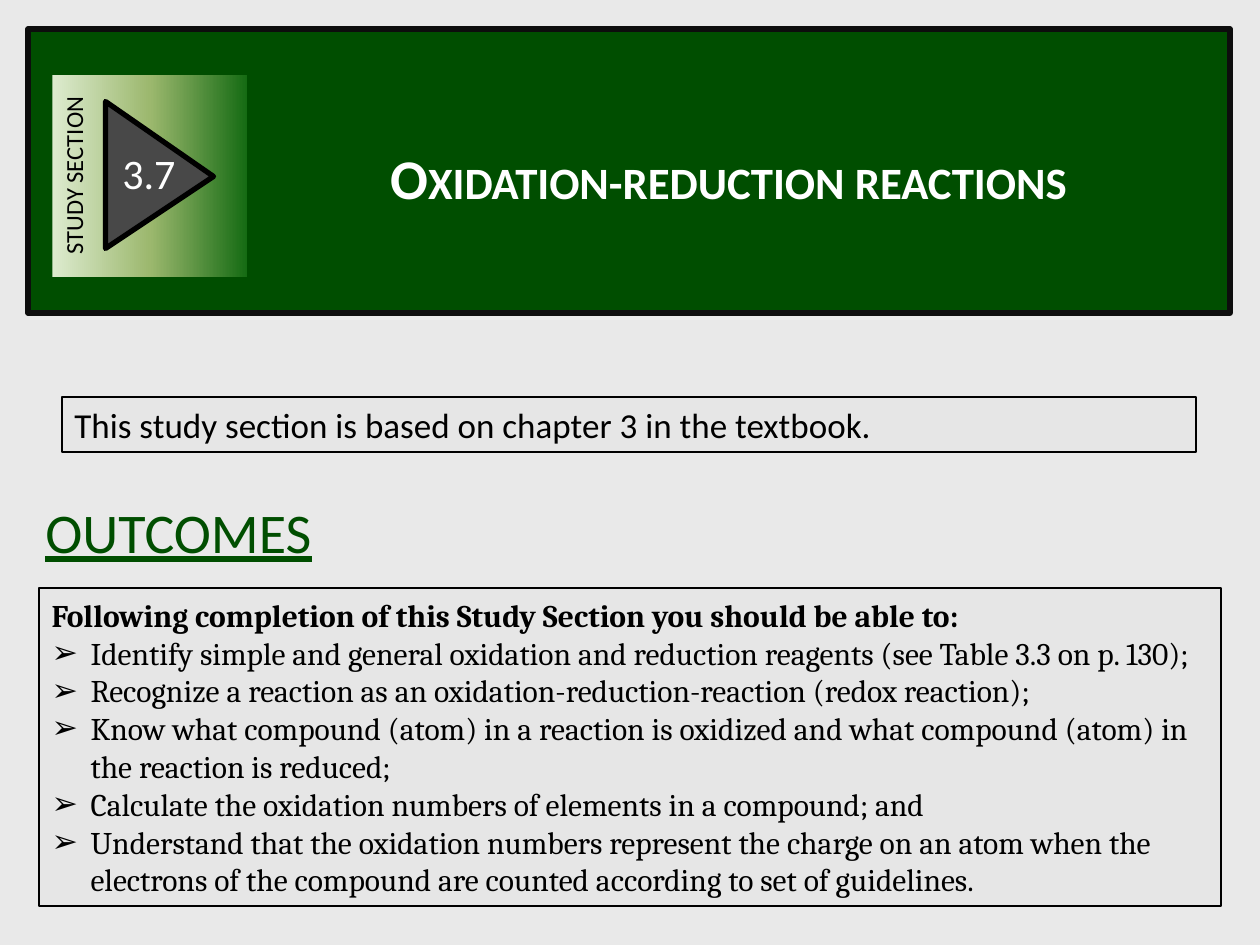
"""Build the opening slide of study section 3.7 on oxidation-reduction reactions."""
from lxml.etree import SubElement
from pptx import Presentation
from pptx.dml.color import RGBColor
from pptx.enum.shapes import MSO_SHAPE as Shape
from pptx.enum.text import MSO_ANCHOR as Anchor, MSO_AUTO_SIZE as Fit, PP_ALIGN as Align
from pptx.oxml.ns import qn
from pptx.util import Emu, Pt

PX = 914400 / 126
GREEN, GREY, BLACK, WHITE = "004E00", "E6E6E6", "000000", "FFFFFF"
OUTCOMES = [
    "Identify simple and general oxidation and reduction reagents (see Table 3.3 on p. 130);",
    "Recognize a reaction as an oxidation-reduction-reaction (redox reaction);",
    "Know what compound (atom) in a reaction is oxidized and what compound (atom) in the reaction is reduced;",
    "Calculate the oxidation numbers of elements in a compound; and",
    "Understand that the oxidation numbers represent the charge on an atom when the electrons of the "
    "compound are counted according to set of guidelines.",
]


def style(shape, at, fill=None, line=None, width=1.5):
    """Place a shape given in px and paint its fill and line."""
    shape.left, shape.top, shape.width, shape.height = (Emu(round(n * PX)) for n in at)
    if fill:
        shape.fill.solid()
        shape.fill.fore_color.rgb = RGBColor.from_string(fill)
    if line:
        shape.line.color.rgb = RGBColor.from_string(line)
        shape.line.width = Pt(width)


def write(para, words, size, color, align=Align.LEFT, face="Calibri", bold=False):
    """Fill a paragraph with evenly formatted text."""
    para.text = words
    para.alignment = align
    para.space_before = Pt(0)
    para.font.name, para.font.size, para.font.bold = face, Pt(size), bold
    para.font.color.rgb = RGBColor.from_string(color)


deck = Presentation()
deck.slide_width, deck.slide_height = Emu(round(1260 * PX)), Emu(round(945 * PX))
page = deck.slides.add_slide(deck.slide_layouts[1])
page.background.fill.solid()
page.background.fill.fore_color.rgb = RGBColor.from_string("E9E9E9")
shapes = page.shapes
title, body = page.placeholders

banner = shapes.add_shape(Shape.RECTANGLE, 0, 0, 0, 0)
banner.shadow.inherit = False
style(banner, (28, 29, 1202, 284), GREEN, "0D0D0D", 3)
title.element.addprevious(banner.element)

style(title, (266, 137, 925, 81))
title.text_frame.vertical_anchor = Anchor.TOP
title.text_frame.auto_size = Fit.NONE
write(title.text_frame.paragraphs[0], "Oxidation-reduction reactions", 32, WHITE, Align.CENTER, bold=True)
next(title.element.iter(qn("a:defRPr"))).set("cap", "small")

badge = shapes.add_group_shape()
panel = badge.shapes.add_shape(Shape.RECTANGLE, 0, 0, 0, 0)
panel.shadow.inherit = False
style(panel, (49, 78, 202, 195))
panel.rotation = 270
panel.line.fill.background()
panel.fill.gradient()
panel.fill.gradient_angle = 270
stops = next(panel.element.iter(qn("a:gsLst")))
for stop in list(stops):
    stops.remove(stop)
for place, color in ((0, "DDEBCF"), (50, "9CB86E"), (100, "156B13")):
    stop = SubElement(stops, qn("a:gs"), pos=str(place * 1000))
    SubElement(stop, qn("a:srgbClr"), val=color)
panel.text_frame.vertical_anchor = Anchor.TOP
write(panel.text_frame.paragraphs[0], "STUDY SECTION", 14, BLACK, Align.CENTER)

arrow = badge.shapes.add_shape(Shape.ISOSCELES_TRIANGLE, 0, 0, 0, 0)
arrow.shadow.inherit = False
style(arrow, (86, 121, 147, 108), "484848", BLACK, 3)
arrow.rotation = 90
arrow.adjustments[0] = 0.51

number = badge.shapes.add_textbox(0, 0, 0, 0)
style(number, (110, 141, 79, 63))
write(number.text_frame.paragraphs[0], "3.7", 24, WHITE)

heading = shapes.add_textbox(0, 0, 0, 0)
style(heading, (33, 491, 336, 81))
heading.text_frame.word_wrap = True
write(heading.text_frame.paragraphs[0], "OUTCOMES", 32, GREEN)
heading.text_frame.paragraphs[0].font.underline = True

style(body, (39, 588, 1182, 318), GREY, BLACK)
frame = body.text_frame
frame.vertical_anchor = Anchor.MIDDLE
frame.auto_size = Fit.NONE
lead = "Following completion of this Study Section you should be able to:"
for index, words in enumerate([lead] + OUTCOMES):
    para = frame.add_paragraph() if index else frame.paragraphs[0]
    props = para._p.get_or_add_pPr()
    indent = round(39 * PX) if index else 0
    props.set("marL", str(indent))
    props.set("indent", str(-indent))
    if index:
        SubElement(props, qn("a:buChar"), char="➢")
    else:
        SubElement(props, qn("a:buNone"))
    write(para, words, 18, BLACK, face="Cambria", bold=not index)

note = shapes.add_shape(Shape.RECTANGLE, 0, 0, 0, 0)
note.shadow.inherit = False
style(note, (62, 397, 1134, 55), GREY, BLACK)
note.text_frame.vertical_anchor = Anchor.MIDDLE
write(note.text_frame.paragraphs[0], "This study section is based on chapter 3 in the textbook.", 20, BLACK)

deck.save("out.pptx")
